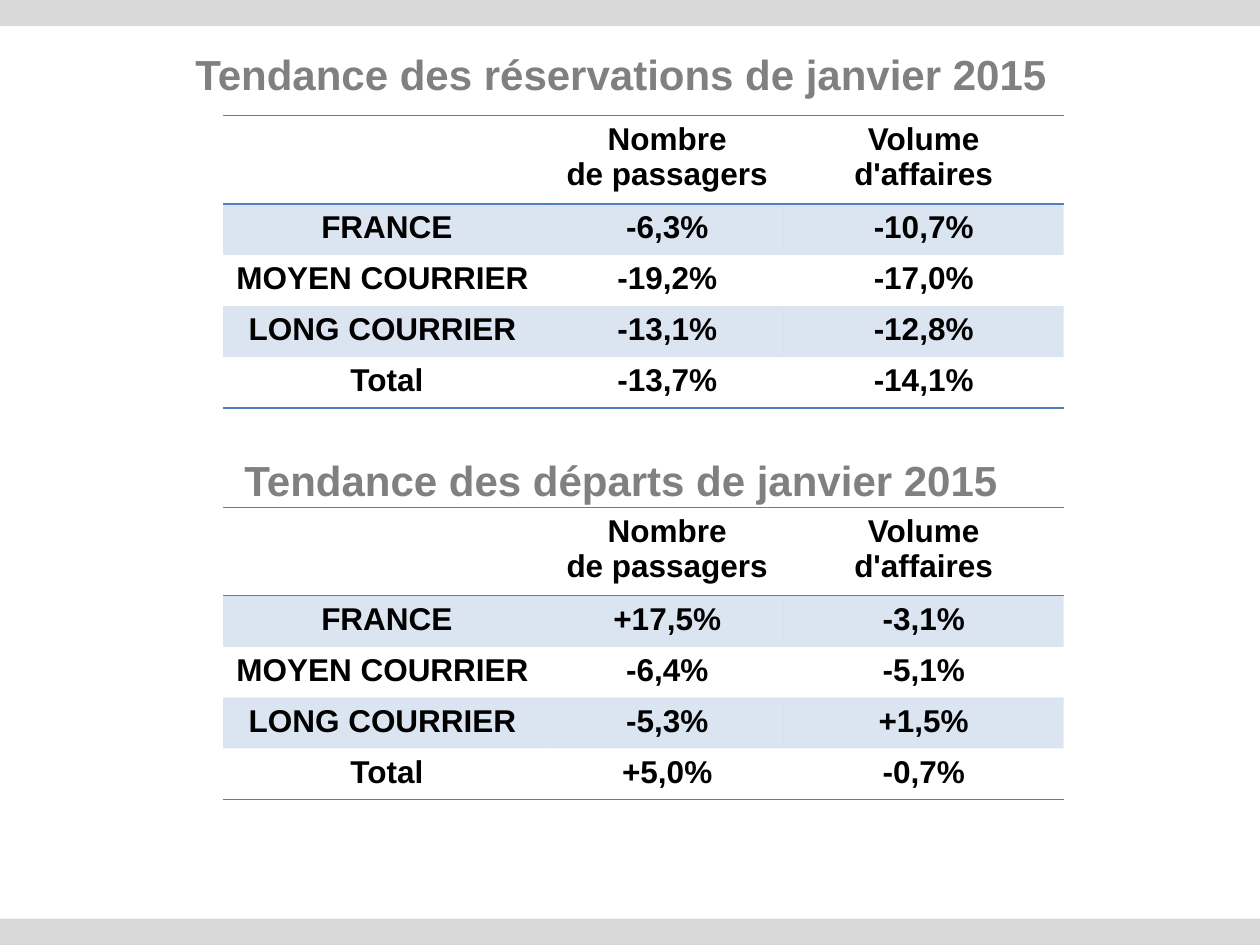
from pptx import Presentation
from pptx.dml.color import RGBColor as Rgb
from pptx.enum.shapes import MSO_SHAPE as Kind
from pptx.enum.text import PP_ALIGN as Align
from pptx.oxml import parse_xml
from pptx.oxml.ns import nsdecls, qn
from pptx.util import Cm, Pt

HUES = {"bar": "D9D9D9", "title": "808080", "text": "000000", "blue": "4F81BD"}
FONT = "Arial"
PLAIN = "{2D5ABB26-0587-4C30-8999-92F81FD0307C}"  # no style, no grid
WIDTHS = (6.6, 4.7, 5.64)
HEAD = ("", "Nombre\nde passagers", "Volume\nd'affaires")
ZONES = ("FRANCE", "MOYEN COURRIER ", "LONG COURRIER ", "Total")


class Page:
    def __init__(self, deck):
        self.slide = deck.slides.add_slide(deck.slide_layouts[6])
        self.shapes = self.slide.shapes

    def bar(self, top, width):
        bar = self.shapes.add_shape(Kind.RECTANGLE, 0, Cm(top), Cm(width), Cm(0.53))
        bar.shadow.inherit = False
        bar.fill.solid()
        bar.fill.fore_color.rgb = Rgb.from_string(HUES["bar"])
        bar.line.fill.background()

    def label(self, frame, text, size, hue):
        frame.text = text
        for para in frame.paragraphs:
            para.alignment = Align.CENTER
            font = para.font
            font.name, font.size, font.bold = FONT, Pt(size), True
            font.color.rgb = Rgb.from_string(HUES[hue])

    def title(self, text, top):
        box = self.shapes.add_textbox(Cm(1.09), Cm(top), Cm(22.86), Cm(3.18))
        frame = box.text_frame
        frame.word_wrap = True
        frame.margin_top = Cm(0.21)
        self.label(frame, text, 24, "title")

    def rule(self, cell, sides):
        props = cell._tc.get_or_add_tcPr()
        for spot, side in enumerate(sides):
            props.insert(spot, parse_xml(
                f'<a:ln{side} {nsdecls("a")} w="12700"><a:solidFill>'
                f'<a:srgbClr val="{HUES["blue"]}"/></a:solidFill></a:ln{side}>'))

    def tint(self, cell):
        cell.fill.solid()
        cell.fill.fore_color.rgb = Rgb.from_string(HUES["blue"])
        color = cell._tc.tcPr.find(".//" + qn("a:srgbClr"))
        color.append(parse_xml(f'<a:alpha {nsdecls("a")} val="20000"/>'))

    def table(self, top, heights, data):
        rows = [HEAD] + [(zone, *pair) for zone, pair in zip(ZONES, data)]
        grid = self.shapes.add_table(len(rows), len(WIDTHS), Cm(4.5), Cm(top),
                                     Cm(sum(WIDTHS)), Cm(sum(heights))).table
        grid.first_row = grid.horz_banding = False
        grid._tbl.tblPr.find(qn("a:tableStyleId")).text = PLAIN
        for col, width in zip(grid.columns, WIDTHS):
            col.width = Cm(width)
        for row, height in zip(grid.rows, heights):
            row.height = Cm(height)
        # Odd rows are tinted; rules frame the header and close the total
        sides = {0: "TB", len(rows) - 1: "B"}
        for r, row in enumerate(rows):
            for c, text in enumerate(row):
                cell = grid.cell(r, c)
                self.label(cell.text_frame, text, 18, "text")
                if r % 2:
                    self.tint(cell)
                else:
                    cell.fill.background()
                self.rule(cell, sides.get(r, ""))


def main():
    deck = Presentation()
    deck.slide_width, deck.slide_height = Cm(25.4), Cm(19.05)
    page = Page(deck)

    # Bands at the top and the foot
    page.bar(0, 25.4)
    page.bar(18.52, 25.5)

    # Bookings
    page.title("Tendance des réservations de janvier 2015", 0.76)
    page.table(2.33, (1.67, 1.03, 1.03, 1.03, 1.03),
               (("-6,3%", "-10,7%"), ("-19,2%", "-17,0%"),
                ("-13,1%", "-12,8%"), ("-13,7%", "-14,1%")))

    # Departures
    page.title("Tendance des départs de janvier 2015", 8.95)
    page.table(10.23, (1.67, 1.03, 0.97, 1.03, 1.03),
               (("+17,5%", "-3,1%"), ("-6,4%", "-5,1%"),
                ("-5,3%", "+1,5%"), ("+5,0%", "-0,7%")))

    deck.save("out.pptx")


if __name__ == "__main__":
    main()
